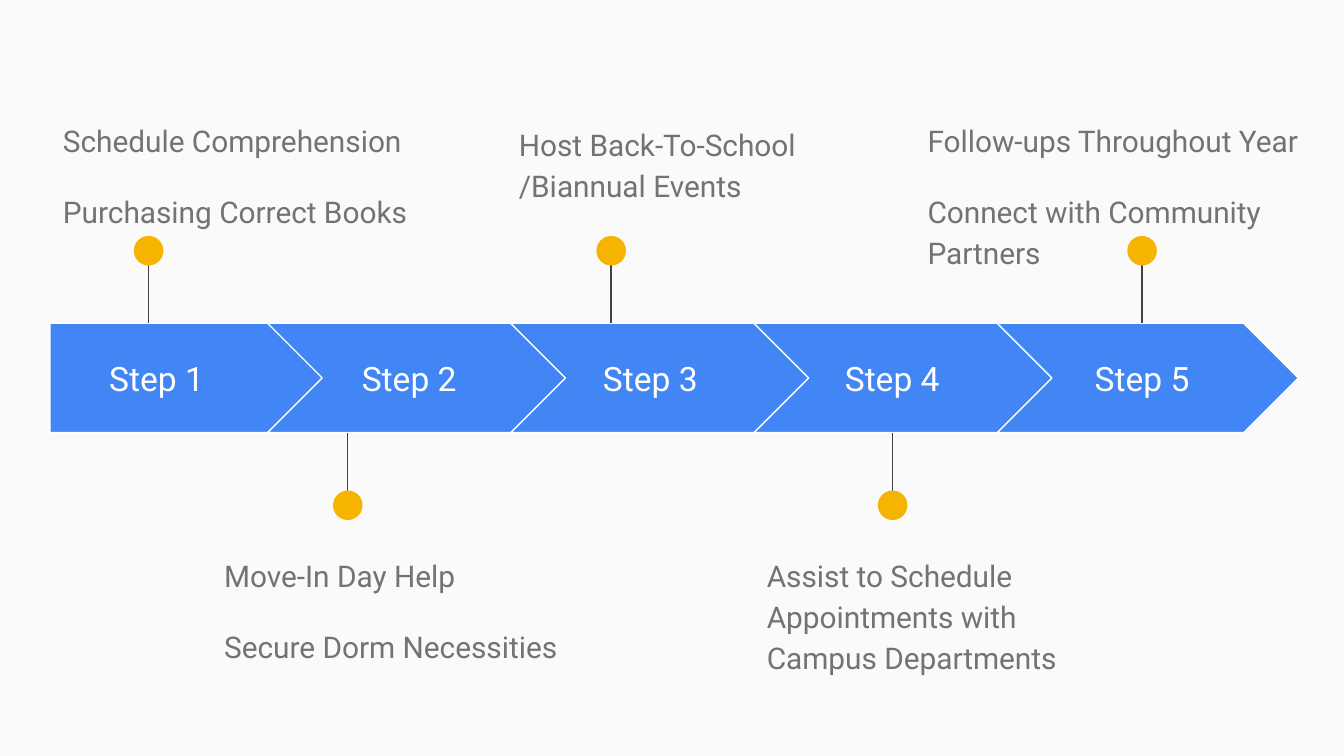
from dataclasses import dataclass

from lxml import etree
from pptx import Presentation
from pptx.dml.color import RGBColor
from pptx.enum import shapes, text
from pptx.oxml import ns
from pptx.util import Pt


@dataclass(frozen=True)
class Theme:
    """Colours, font and sizes of the slide."""
    paper: RGBColor = RGBColor(0xFA, 0xFA, 0xFA)
    arrow: RGBColor = RGBColor(0x42, 0x85, 0xF4)
    white: RGBColor = RGBColor(0xFF, 0xFF, 0xFF)
    dot: RGBColor = RGBColor(0xF4, 0xB4, 0x00)
    stem: RGBColor = RGBColor(0x42, 0x42, 0x42)
    note: RGBColor = RGBColor(0x73, 0x73, 0x73)
    font: str = "Roboto"
    step_size: float = 18
    note_size: float = 16
    line: float = 0.75


@dataclass(frozen=True)
class Box:
    """A rectangle in points."""
    left: float
    top: float
    width: float
    height: float

    def lengths(self):
        """Return the four lengths for python-pptx."""
        return [Pt(n) for n in (self.left, self.top, self.width, self.height)]


@dataclass(frozen=True)
class Step:
    """One step: label place, marker centre, note box and note paragraphs."""
    label_left: float
    label_width: float
    marker: float
    above: bool
    note_box: Box
    notes: tuple


THEME = Theme()
BAND = Box(26.64, 173.2, 668.9, 58.6)
FIRST_WIDTH, CHEVRON_WIDTH, PITCH = 147.6, 161.3, 130.3
LABEL_TOP, LABEL_HEIGHT = 184.3, 36.7
DOT, STEM = 15.84, 43.9
STEPS = (
    Step(26.64, 114.5, 79.6, True, Box(26.64, 55.4, 212.4, 71.3),
         ("Schedule Comprehension", "Purchasing Correct Books")),
    Step(167.4, 103.7, 186.3, False, Box(113, 288.7, 212.4, 71.3),
         ("Move-In Day Help", "Secure Dorm Necessities")),
    Step(296.6, 103.7, 327.4, True, Box(270.9, 57.6, 258.5, 71.3),
         ("Host Back-To-School\n/Biannual Events",)),
    Step(426.2, 103.7, 478.2, False, Box(403.7, 288.7, 176.4, 71.3),
         ("Assist to Schedule Appointments with Campus Departments",)),
    Step(560, 103.7, 611.8, True, Box(489.8, 55.4, 223.9, 71.3),
         ("Follow-ups Throughout Year", "Connect with Community Partners")),
)


def add_text(page, box, lines, size, color, label=False):
    """Write paragraphs in a text box, as a centred label or a spaced note."""
    frame = page.shapes.add_textbox(*box.lengths()).text_frame
    frame.word_wrap = True
    frame.margin_left = frame.margin_right = Pt(7.2)
    frame.margin_top = frame.margin_bottom = Pt(7.2)
    frame.vertical_anchor = text.MSO_ANCHOR.MIDDLE if label else text.MSO_ANCHOR.TOP
    for index, line in enumerate(lines):
        para = frame.add_paragraph() if index else frame.paragraphs[0]
        if label:
            para.alignment = text.PP_ALIGN.CENTER
        else:
            para.line_spacing = 1.15
            para.space_before = Pt(size if index else 0)
        for row, words in enumerate(line.split("\n")):
            if row:
                para.add_line_break()
            span = para.add_run()
            span.text = words
            span.font.name = THEME.font
            span.font.size = Pt(size)
            span.font.color.rgb = color


def add_solid(page, kind, box, fill, line=None):
    """Draw a filled preset shape, outlined only if a line colour is given."""
    shape = page.shapes.add_shape(kind, *box.lengths())
    shape.shadow.inherit = False
    shape.fill.solid()
    shape.fill.fore_color.rgb = fill
    if line is None:
        shape.line.fill.background()
    else:
        shape.line.color.rgb = line
        shape.line.width = Pt(THEME.line)


def add_arrow(page, index, box):
    """Draw one arrow of the band: a pentagon first, then chevrons."""
    kind = shapes.MSO_SHAPE.CHEVRON if index else shapes.MSO_SHAPE.PENTAGON
    add_solid(page, kind, box, THEME.arrow, THEME.white)


def add_marker(page, center, above, band):
    """Draw the stem and dot that join the band to a note."""
    edge = band.top if above else band.top + band.height
    end = edge - STEM if above else edge + STEM
    stem = page.shapes.add_connector(
        shapes.MSO_CONNECTOR.STRAIGHT, Pt(center), Pt(end), Pt(center), Pt(edge))
    stem.line.color.rgb = THEME.stem
    stem.line.width = Pt(THEME.line)
    etree.SubElement(stem.element.spPr, ns.qn("a:effectLst"))
    dot_top = end - 2.9 if above else end + 2.9 - DOT
    add_solid(page, shapes.MSO_SHAPE.OVAL,
              Box(center - DOT / 2, dot_top, DOT, DOT), THEME.dot)


def add_timeline(page, band):
    """Place every step's arrow, label, marker and note along the band."""
    for index, step in enumerate(STEPS):
        width = CHEVRON_WIDTH if index else FIRST_WIDTH
        right = band.left + band.width - (len(STEPS) - 1 - index) * PITCH
        add_arrow(page, index, Box(right - width, band.top, width, band.height))
        label_box = Box(step.label_left, LABEL_TOP, step.label_width, LABEL_HEIGHT)
        add_text(page, label_box, (f"Step {index + 1}",),
                 THEME.step_size, THEME.white, label=True)
        add_marker(page, step.marker, step.above, band)
        add_text(page, step.note_box, step.notes, THEME.note_size, THEME.note)


def main():
    """Build and save the deck."""
    deck = Presentation()
    deck.slide_width, deck.slide_height = Pt(720), Pt(405)
    page = deck.slides.add_slide(deck.slide_layouts[6])
    page.background.fill.solid()
    page.background.fill.fore_color.rgb = THEME.paper
    add_timeline(page, BAND)
    deck.save("out.pptx")


if __name__ == "__main__":
    main()
